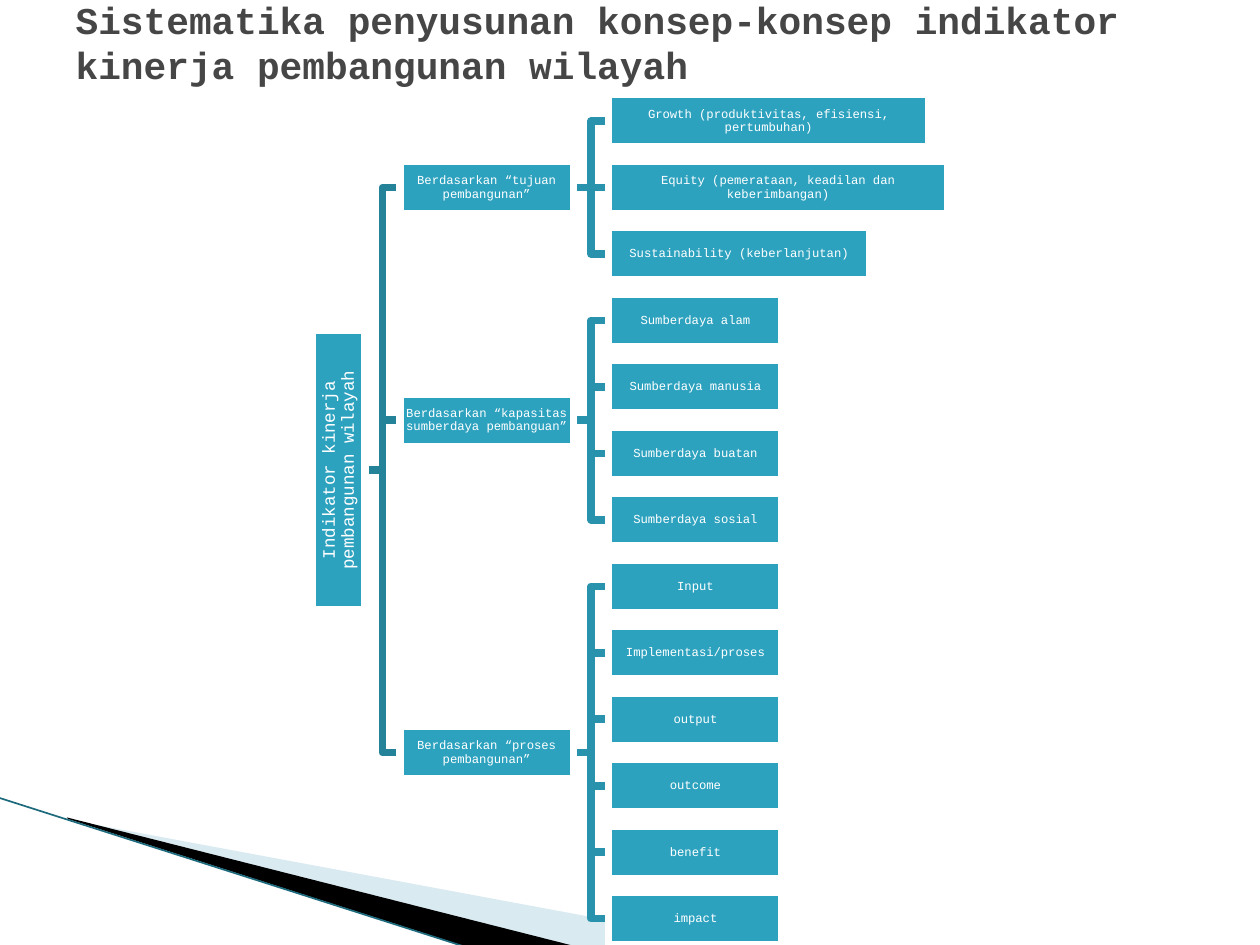
"""Build a slide with a horizontal tree of regional development indicators."""
from lxml import etree
from pptx import Presentation
from pptx import util as u
from pptx.dml.color import RGBColor
from pptx.enum import shapes, text
from pptx.oxml.ns import qn

COLORS = {"box": "2DA2BF", "white": "FFFFFF", "trunk": "248299", "branch": "2993AD",
          "title": "464646", "pale": "A0CBDC", "black": "000000", "edge": "1D6A7D"}
FONT = "Courier New"
ROOT = "Indikator kinerja pembangunan wilayah"
BRANCHES = [
    ("Berdasarkan “tujuan pembangunan”",
     [("Growth (produktivitas, efisiensi, pertumbuhan)", 6.45),
      ("Equity (pemerataan, keadilan dan keberimbangan)", 6.83),
      ("Sustainability (keberlanjutan)", 5.26)]),
    ("Berdasarkan “kapasitas sumberdaya pembanguan”",
     [("Sumberdaya alam", 3.5), ("Sumberdaya manusia", 3.5),
      ("Sumberdaya buatan", 3.5), ("Sumberdaya sosial", 3.5)]),
    ("Berdasarkan “proses pembangunan”",
     [("Input", 3.5), ("Implementasi/proses", 3.5), ("output", 3.5),
      ("outcome", 3.5), ("benefit", 3.5), ("impact", 3.5)]),
]
BOX_HEIGHT, BOX_WIDTH, ROOT_LENGTH = 1.06, 3.5, 5.64
ROOT_CENTER, BRANCH_LEFT, LEAF_LEFT = 6.83, 8.06, 12.27
FIRST_ROW, ROW_PITCH = 2.44, 1.34
LINE_WIDTH = u.Pt(4.33)


def add_box(label, left, middle, width, size=7):
    shape = slide.shapes.add_shape(shapes.MSO_SHAPE.RECTANGLE, u.Cm(left),
                                   u.Cm(middle - BOX_HEIGHT / 2), u.Cm(width), u.Cm(BOX_HEIGHT))
    shape.shadow.inherit = False
    shape.fill.solid()
    shape.fill.fore_color.rgb = RGBColor.from_string(COLORS["box"])
    shape.line.color.rgb = RGBColor.from_string(COLORS["white"])
    shape.line.width = LINE_WIDTH
    frame = shape.text_frame
    frame.word_wrap = True
    frame.vertical_anchor = text.MSO_ANCHOR.MIDDLE
    frame.margin_left = frame.margin_right = frame.margin_top = frame.margin_bottom = 0
    paragraph = frame.paragraphs[0]
    paragraph.text = label
    paragraph.alignment = text.PP_ALIGN.CENTER
    paragraph.line_spacing = 0.9
    paragraph.font.name = FONT
    paragraph.font.size = u.Pt(size)
    paragraph.font.color.rgb = RGBColor.from_string(COLORS["white"])
    return shape


def add_outline(points):
    corners = [(u.Cm(x), u.Cm(y)) for x, y in points]
    builder = slide.shapes.build_freeform(*corners[0])
    builder.add_line_segments(corners[1:], close=False)
    shape = builder.convert_to_shape()
    shape.shadow.inherit = False
    return shape


presentation = Presentation()
presentation.slide_width, presentation.slide_height = u.Cm(25.4), u.Cm(19.05)
slide = presentation.slides.add_slide(presentation.slide_layouts[5])

title = slide.shapes.title
title.left, title.top, title.width, title.height = u.Cm(1.27), u.Cm(0), u.Cm(22.86), u.Cm(1.7)
title.text_frame.auto_size = text.MSO_AUTO_SIZE.NONE
title.text_frame.vertical_anchor = text.MSO_ANCHOR.MIDDLE
heading = title.text_frame.paragraphs[0]
heading.text = "Sistematika penyusunan konsep-konsep indikator kinerja pembangunan wilayah"
heading.alignment = text.PP_ALIGN.LEFT
heading.font.name, heading.font.size, heading.font.bold = FONT, u.Pt(21.6), True
heading.font.color.rgb = RGBColor.from_string(COLORS["title"])

wedges = [("pale", [(1.4, 16.53), (15.11, 19.08), (11.58, 19.08), (1.4, 16.51)]),
          ("black", [(1.35, 16.48), (11.61, 19.08), (9.45, 19.1), (1.37, 16.51)])]
for color, points in wedges:
    wedge = add_outline(points)
    wedge.fill.solid()
    wedge.fill.fore_color.rgb = RGBColor.from_string(COLORS[color])
    wedge.line.fill.background()
    if color == "pale":
        fill_color = wedge.fill._xPr.find(qn("a:solidFill"))[0]
        etree.SubElement(fill_color, qn("a:alpha")).set("val", "40000")

edge = slide.shapes.add_connector(shapes.MSO_CONNECTOR.STRAIGHT, u.Cm(-0.03), u.Cm(16.08),
                                  u.Cm(9.42), u.Cm(19.1))
edge.line.color.rgb = RGBColor.from_string(COLORS["edge"])
edge.line.width = u.Pt(0.95)
etree.SubElement(edge._element.spPr, qn("a:effectLst"))

tree = slide.shapes._spTree
line_layer = len(tree)
links = []
branch_boxes = []
row = 0
for branch_label, leaves in BRANCHES:
    branch_middle = FIRST_ROW + (row + (len(leaves) - 1) / 2) * ROW_PITCH
    branch = add_box(branch_label, BRANCH_LEFT, branch_middle, BOX_WIDTH)
    branch_boxes.append((branch, branch_middle))
    for leaf_label, width in leaves:
        leaf_middle = FIRST_ROW + row * ROW_PITCH
        leaf = add_box(leaf_label, LEAF_LEFT, leaf_middle, width)
        links.append(("branch", branch, leaf, BRANCH_LEFT + BOX_WIDTH, branch_middle,
                      LEAF_LEFT, leaf_middle))
        row += 1

root_middle = (branch_boxes[0][1] + branch_boxes[-1][1]) / 2
root = add_box(ROOT, ROOT_CENTER - ROOT_LENGTH / 2, root_middle, ROOT_LENGTH, 10)
root.rotation = 270
for branch, branch_middle in branch_boxes:
    links.append(("trunk", root, branch, ROOT_CENTER + BOX_HEIGHT / 2, root_middle,
                  BRANCH_LEFT, branch_middle))

for color, parent, child, start_x, start_y, end_x, end_y in links:
    if abs(start_y - end_y) < 0.01:
        link = slide.shapes.add_connector(shapes.MSO_CONNECTOR.STRAIGHT, u.Cm(start_x),
                                          u.Cm(start_y), u.Cm(end_x), u.Cm(end_y))
        link.begin_connect(parent, 3)
        link.end_connect(child, 1)
    else:
        bend = (start_x + end_x) / 2
        link = add_outline([(start_x, start_y), (bend, start_y), (bend, end_y), (end_x, end_y)])
        link.fill.background()
    link.line.color.rgb = RGBColor.from_string(COLORS[color])
    link.line.width = LINE_WIDTH
    if link.shape_type == shapes.MSO_SHAPE_TYPE.LINE:
        etree.SubElement(link._element.spPr, qn("a:effectLst"))
    tree.insert(line_layer, link._element)

presentation.save("out.pptx")
